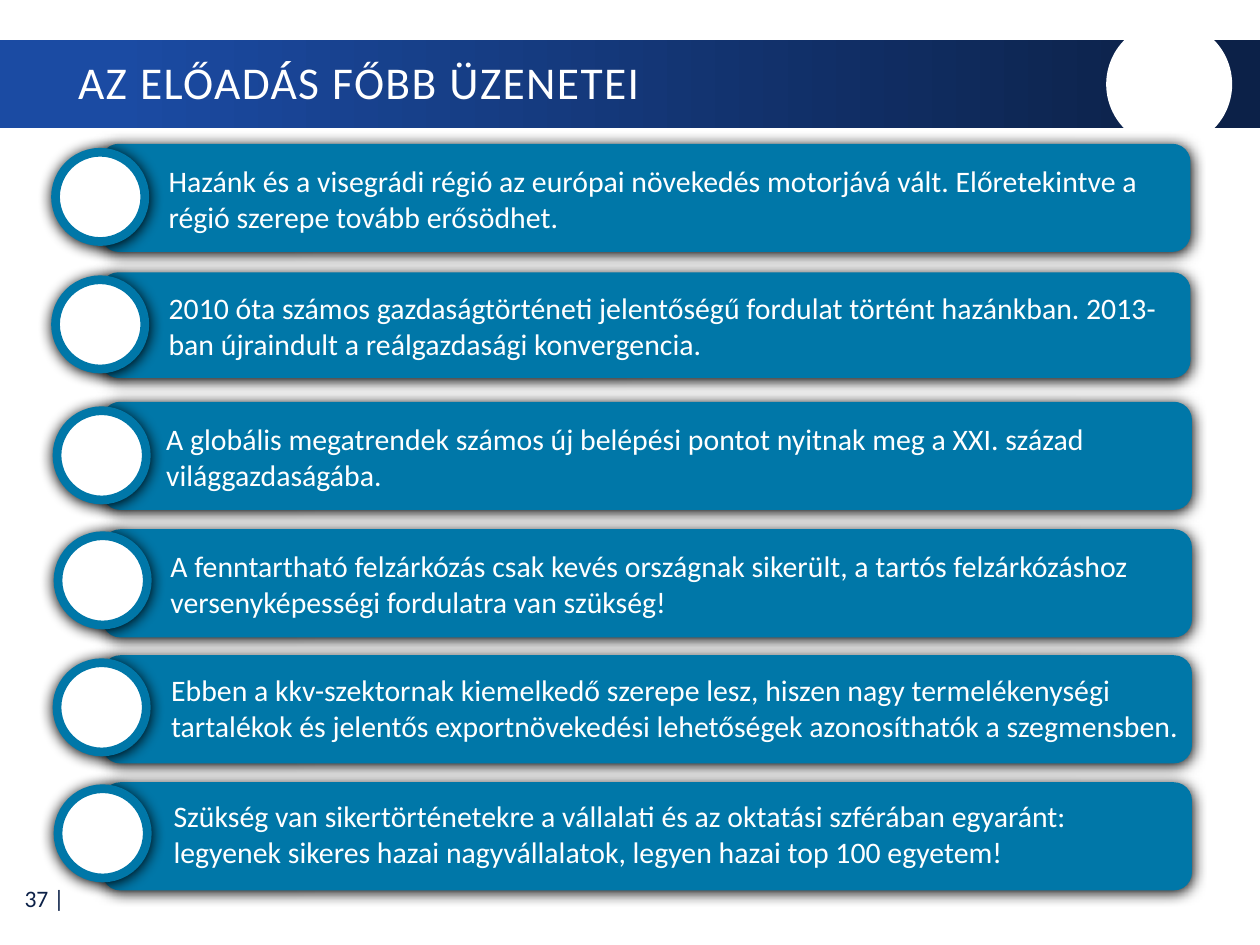
from dataclasses import dataclass

from lxml.etree import SubElement
from pptx import Presentation
from pptx.dml.color import RGBColor
from pptx.enum.shapes import MSO_SHAPE
from pptx.enum.text import MSO_ANCHOR, MSO_AUTO_SIZE, PP_ALIGN
from pptx.oxml.ns import qn
from pptx.shapes.autoshape import Shape
from pptx.slide import Slide
from pptx.text.text import TextFrame
from pptx.util import Cm, Pt

WHITE = RGBColor(0xFF, 0xFF, 0xFF)
NAVY = RGBColor(0x0C, 0x21, 0x48)
ROYAL = RGBColor(0x1B, 0x4B, 0xA3)
TEAL = RGBColor(0x00, 0x77, 0xA8)
FONT = "Calibri"
BAR_WIDTH, RING_SIZE, TEXT_HEIGHT = 21.97, 1.8, 1.7


@dataclass
class Message:
    """One row; lengths in cm. Without text_left the text sits in the bar."""
    text: str
    bar_left: float
    bar_top: float
    ring_left: float
    ring_top: float
    text_left: float | None = None
    text_top: float = 0
    text_width: float = 20.85
    bar_height: float = 2.18


MESSAGES = [
    Message("Hazánk és a visegrádi régió az európai növekedés motorjává vált. "
            "Előretekintve a régió szerepe tovább erősödhet.",
            2.03, 2.9, 1.12, 3.07, 3.15, 3.15),
    Message("2010 óta számos gazdaságtörténeti jelentőségű fordulat történt hazánkban. "
            "2013-ban újraindult a reálgazdasági konvergencia.",
            2.03, 5.49, 1.12, 5.64, 3.15, 5.72, bar_height=2.13),
    Message("A globális megatrendek számos új belépési pontot nyitnak meg a XXI. század "
            "világgazdaságába.",
            2.06, 8.1, 1.15, 8.28, 3.1, 8.36),
    Message("A fenntartható felzárkózás csak kevés országnak sikerült, a tartós "
            "felzárkózáshoz versenyképességi fordulatra van szükség!",
            2.06, 10.67, 1.17, 10.8),
    Message("Ebben a kkv-szektornak kiemelkedő szerepe lesz, hiszen nagy termelékenységi "
            "tartalékok és jelentős exportnövekedési lehetőségek azonosíthatók a "
            "szegmensben.",
            2.06, 13.21, 1.15, 13.36, 3.2, 13.41),
    Message("Szükség van sikertörténetekre a vállalati és az oktatási szférában egyaránt: "
            "legyenek sikeres hazai nagyvállalatok, legyen hazai top 100 egyetem!",
            2.06, 15.77, 1.17, 15.9, 3.25, 15.95, 20.68),
]


def write(tf: TextFrame, text: str, size: float, color: RGBColor,
          align: PP_ALIGN = PP_ALIGN.LEFT) -> None:
    tf.text = text
    tf.word_wrap = True
    tf.vertical_anchor = MSO_ANCHOR.MIDDLE
    p = tf.paragraphs[0]
    p.alignment = align
    font = p.runs[0].font
    font.name, font.size, font.color.rgb = FONT, Pt(size), color


def add_box(s: Slide, kind: MSO_SHAPE, left: float, top: float,
            width: float, height: float, fill: RGBColor) -> Shape:
    sp = s.shapes.add_shape(kind, Cm(left), Cm(top), Cm(width), Cm(height))
    sp.fill.solid()
    sp.fill.fore_color.rgb = fill
    sp.line.fill.background()
    sp.shadow.inherit = False
    return sp


def add_text(s: Slide, left: float, top: float, width: float, height: float) -> TextFrame:
    return s.shapes.add_textbox(Cm(left), Cm(top), Cm(width), Cm(height)).text_frame


def cast_shadow(sp: Shape) -> None:
    effects = sp.element.spPr.find(qn("a:effectLst"))
    shadow = SubElement(effects, qn("a:outerShdw"), blurRad=str(Pt(8.5)),
                        dist=str(Pt(1)), dir="5400000", algn="t", rotWithShape="0")
    SubElement(shadow, qn("a:srgbClr"), val="000000")


def add_header(s: Slide) -> None:
    band = add_box(s, MSO_SHAPE.RECTANGLE, 0, 0.81, 25.4, 1.78, NAVY)
    band.fill.gradient()
    band.fill.gradient_angle = 0
    for stop, (position, color) in zip(band.fill.gradient_stops,
                                       [(0.09, ROYAL), (0.95, NAVY)]):
        stop.position, stop.color.rgb = position, color
    add_box(s, MSO_SHAPE.OVAL, 22.3, 0.43, 2.54, 2.54, WHITE)

    title = s.shapes.title
    title.left, title.top, title.width, title.height = Cm(1.32), Cm(0.86), Cm(21.13), Cm(1.7)
    write(title.text_frame, "AZ ELŐADÁS FŐBB ÜZENETEI", 26, WHITE)
    title.text_frame.auto_size = MSO_AUTO_SIZE.NONE
    p = title.text_frame.paragraphs[0]
    p.line_spacing = 0.9
    p.runs[0].font._element.set("spc", "80")
    s.shapes.element.append(title.element)  # bring the title in front of the band


def add_message(s: Slide, m: Message) -> None:
    bar = add_box(s, MSO_SHAPE.ROUNDED_RECTANGLE, m.bar_left, m.bar_top,
                  BAR_WIDTH, m.bar_height, TEAL)
    ring = add_box(s, MSO_SHAPE.OVAL, m.ring_left, m.ring_top, RING_SIZE, RING_SIZE, WHITE)
    ring.line.color.rgb = TEAL
    ring.line.width = Pt(5)
    cast_shadow(bar)
    cast_shadow(ring)
    if m.text_left is None:
        write(bar.text_frame, m.text, 17, WHITE)
        bar.text_frame.paragraphs[0]._p.get_or_add_pPr().set("marL", str(Cm(1.02)))
    else:
        tf = add_text(s, m.text_left, m.text_top, m.text_width, TEXT_HEIGHT)
        write(tf, m.text, 17, WHITE)
        tf.auto_size = MSO_AUTO_SIZE.SHAPE_TO_FIT_TEXT


def main() -> None:
    prs = Presentation()
    prs.slide_width, prs.slide_height = Cm(25.4), Cm(19.05)
    s = prs.slides.add_slide(prs.slide_layouts[5])
    write(add_text(s, 0.03, 17.63, 1.52, 0.94), "37 |", 13.5, NAVY, PP_ALIGN.RIGHT)
    add_header(s)
    for message in MESSAGES:
        add_message(s, message)
    prs.save("out.pptx")


if __name__ == "__main__":
    main()
